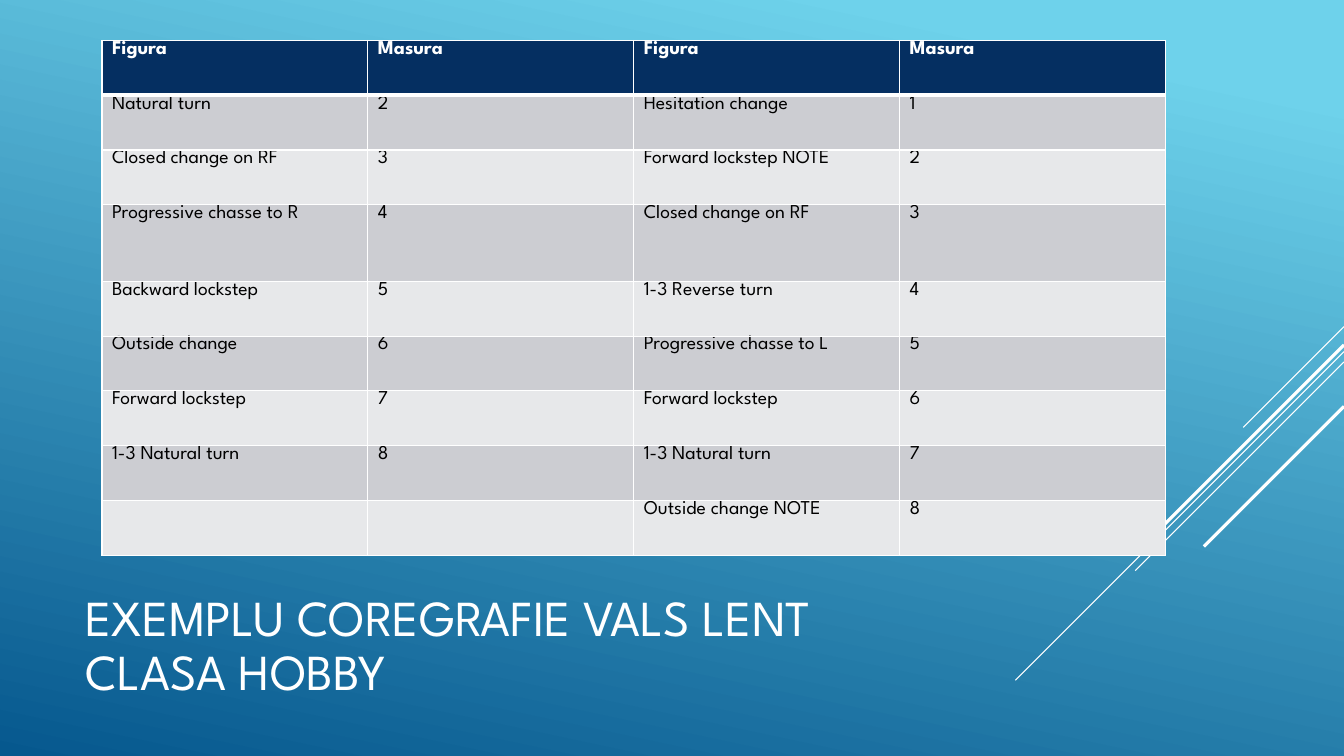
from dataclasses import dataclass

from lxml import etree
from pptx import Presentation
from pptx.dml.color import RGBColor
from pptx.enum import shapes, text
from pptx.oxml import ns
from pptx.util import Cm, Pt


@dataclass(frozen=True)
class Theme:
    font: str = "League Spartan"
    sky: str = "6ED2EB"
    sea: str = "06588E"
    navy: str = "052F61"
    dark_band: str = "CCCDD2"
    light_band: str = "E7E8EA"
    white: str = "FFFFFF"
    black: str = "000000"
    title_size: float = 36
    table_size: float = 14
    thin: float = 0.75
    thick: float = 2.25
    grid: float = 1
    header_rule: float = 3


@dataclass(frozen=True)
class Box:
    """Left, top, width and height in centimetres."""
    left: float
    top: float
    width: float
    height: float

    def lengths(self):
        return Cm(self.left), Cm(self.top), Cm(self.width), Cm(self.height)


THEME = Theme()
PAGE = Box(0, 0, 33.87, 19.05)
TITLE = Box(1.9, 14.58, 23.7, 3.45)
TABLE = Box(2.57, 1.02, 26.8, 12.97)
TALL_ROW, TALL_HEIGHT = 3, 1.93

# Height on the right edge, horizontal and vertical run, line width
STREAKS = [
    (8.23, 2.54, THEME.thin),
    (8.86, 8.28, THEME.thin),
    (9.12, 5.26, THEME.thin),
    (8.69, 4.85, THEME.thick),
    (10.24, 3.53, THEME.thick),
]

FIGURES = [
    ("Figura", "Masura", "Figura", "Masura"),
    ("Natural turn", "2", "Hesitation change", "1"),
    ("Closed change on RF", "3", "Forward lockstep NOTE", "2"),
    ("Progressive chasse to R", "4", "Closed change on RF", "3"),
    ("Backward lockstep", "5", "1-3 Reverse turn", "4"),
    ("Outside change", "6", "Progressive chasse to L", "5"),
    ("Forward lockstep", "7", "Forward lockstep", "6"),
    ("1-3 Natural turn", "8", "1-3 Natural turn", "7"),
    ("", "", "Outside change NOTE", "8"),
]


def rgb(value):
    return RGBColor.from_string(value)


def format_runs(frame, size, color, bold=False):
    for para in frame.paragraphs:
        for span in para.runs:
            span.font.name = THEME.font
            span.font.size = Pt(size)
            span.font.bold = bold
            span.font.color.rgb = rgb(color)


def paint_background(page):
    fill = page.background.fill
    fill.gradient()
    fill.gradient_angle = 258
    for stop, color, position in zip(
            fill.gradient_stops, (THEME.sky, THEME.sea), (0.1, 1)):
        stop.color.rgb = rgb(color)
        stop.position = position


def add_streaks(page, box):
    right = box.left + box.width
    for height, run, weight in STREAKS:
        start = box.top + height
        streak = page.shapes.add_connector(
            shapes.MSO_CONNECTOR.STRAIGHT,
            Cm(right), Cm(start), Cm(right - run), Cm(start + run))
        streak.line.color.rgb = rgb(THEME.white)
        streak.line.width = Pt(weight)
        etree.SubElement(streak._element.spPr, ns.qn("a:effectLst"))


def place_title(page, box):
    title = page.shapes.title
    title.left, title.top, title.width, title.height = box.lengths()
    frame = title.text_frame
    frame.text = "EXEMPLU COREGRAFIE VALS LENT\vCLASA HOBBY"
    frame.word_wrap = True
    frame.auto_size = text.MSO_AUTO_SIZE.NONE
    frame.vertical_anchor = text.MSO_ANCHOR.MIDDLE
    para = frame.paragraphs[0]
    para.alignment = text.PP_ALIGN.LEFT
    para.line_spacing = 0.9
    format_runs(frame, THEME.title_size, THEME.white)


def set_borders(cell, top, bottom):
    properties = cell._tc.get_or_add_tcPr()
    widths = {"lnL": THEME.grid, "lnR": THEME.grid, "lnT": top, "lnB": bottom}
    for index, (side, width) in enumerate(widths.items()):
        border = etree.Element(ns.qn(f"a:{side}"), w=str(Pt(width)))
        fill = etree.SubElement(border, ns.qn("a:solidFill"))
        etree.SubElement(fill, ns.qn("a:srgbClr"), val=THEME.white)
        properties.insert(index, border)


def fill_cell(cell, wording, row):
    header = row == 0
    band = THEME.dark_band if row % 2 else THEME.light_band
    cell.text_frame.text = wording
    cell.margin_top = cell.margin_bottom = 0
    format_runs(cell.text_frame, THEME.table_size,
                THEME.white if header else THEME.black, bold=header)
    cell.fill.solid()
    cell.fill.fore_color.rgb = rgb(THEME.navy if header else band)
    set_borders(cell,
                top=THEME.header_rule if row == 1 else THEME.grid,
                bottom=THEME.header_rule if header else THEME.grid)


def add_figure_table(page, box):
    row_count, column_count = len(FIGURES), len(FIGURES[0])
    table = page.shapes.add_table(
        row_count, column_count, *box.lengths()).table
    table.first_row = table.horz_banding = False
    for column in table.columns:
        column.width = Cm(box.width / column_count)
    row_height = (box.height - TALL_HEIGHT) / (row_count - 1)
    for row, figures in enumerate(FIGURES):
        table.rows[row].height = Cm(
            TALL_HEIGHT if row == TALL_ROW else row_height)
        for column, wording in enumerate(figures):
            fill_cell(table.cell(row, column), wording, row)


def build_choreography(deck):
    page = deck.slides.add_slide(deck.slide_layouts[5])
    # Backdrop
    paint_background(page)
    add_streaks(page, PAGE)
    # Content
    place_title(page, TITLE)
    add_figure_table(page, TABLE)


def main():
    deck = Presentation()
    deck.slide_width, deck.slide_height = Cm(PAGE.width), Cm(PAGE.height)
    build_choreography(deck)
    deck.save("out.pptx")


if __name__ == "__main__":
    main()
